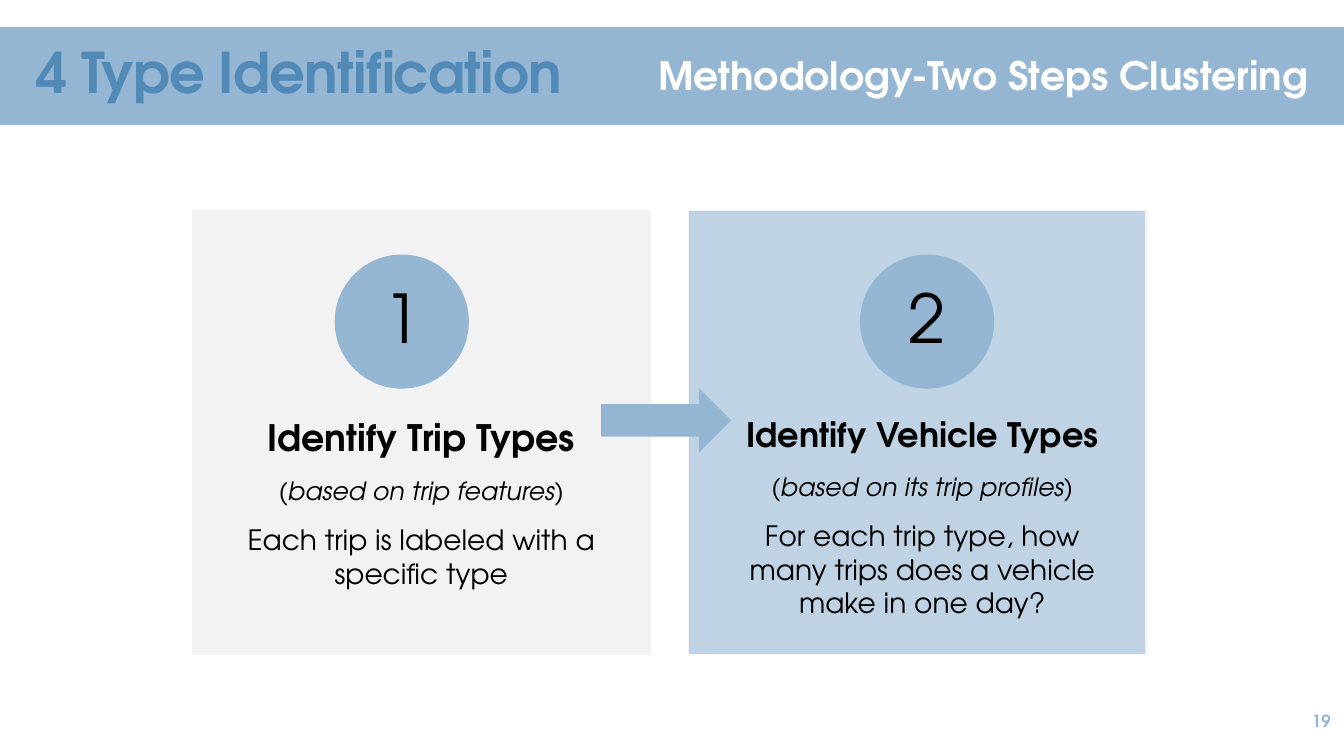
import pptx
import pptx.dml.color
import pptx.enum.shapes
import pptx.enum.text
import pptx.util

Pt = pptx.util.Pt
RGBColor = pptx.dml.color.RGBColor
Shape = pptx.enum.shapes.MSO_SHAPE
Align = pptx.enum.text.PP_ALIGN
Anchor = pptx.enum.text.MSO_ANCHOR

BLUE = RGBColor(0x94, 0xB6, 0xD2)
DEEP_BLUE = RGBColor(0x51, 0x89, 0xB7)
PALE_BLUE = RGBColor(0xBF, 0xD3, 0xE4)
GREY = RGBColor(0xF2, 0xF2, 0xF2)
WHITE = RGBColor(0xFF, 0xFF, 0xFF)
BLACK = RGBColor(0, 0, 0)


class SlideBuilder:
    font_name = "TeX Gyre Adventor"
    outline_width = 0.85
    card_top, card_width, card_height = 150.5, 326.9, 316.8
    circle_top, circle_size, number_inset = 182.2, 95, 14

    def __init__(self, slide):
        self.slide = slide

    def shape(self, kind, left, top, width, height, fill, outline=None):
        shape = self.slide.shapes.add_shape(kind, Pt(left), Pt(top), Pt(width), Pt(height))
        shape.shadow.inherit = False
        shape.fill.solid()
        shape.fill.fore_color.rgb = fill
        if outline is None:
            shape.line.fill.background()
        else:
            shape.line.color.rgb = outline
            shape.line.width = Pt(self.outline_width)

    def text_box(self, left, top, width, height, margins=(7.2, 3.6),
                 anchor=Anchor.TOP, wrap=True):
        """Add an empty text frame; margins are (horizontal, vertical)."""
        box = self.slide.shapes.add_textbox(Pt(left), Pt(top), Pt(width), Pt(height))
        frame = box.text_frame
        frame.word_wrap = wrap
        frame.vertical_anchor = anchor
        frame.margin_left = frame.margin_right = Pt(margins[0])
        frame.margin_top = frame.margin_bottom = Pt(margins[1])
        return frame

    def style(self, paragraph, text, size, color=BLACK, bold=False, italic=False,
              align=Align.LEFT):
        paragraph.text = text
        paragraph.alignment = align
        font = paragraph.font
        font.name, font.size = self.font_name, Pt(size)
        font.bold, font.italic = bold, italic
        font.color.rgb = color

    def header(self, title, subtitle):
        self.shape(Shape.RECTANGLE, 0, 19.4, 960, 69.8, BLUE)
        paragraph = self.text_box(18.7, 8.6, 534, 90.7, anchor=Anchor.MIDDLE).paragraphs[0]
        self.style(paragraph, title, 40, DEEP_BLUE, bold=True)
        paragraph.line_spacing = 0.9
        paragraph.runs[0].font._element.set("spc", "-60")
        frame = self.text_box(463, 33.1, 487.4, 41, wrap=False)
        self.style(frame.paragraphs[0], subtitle, 28, WHITE, bold=True)

    def step(self, number, card_left, text_left, text_top, circle_left, fill,
             heading, heading_size, basis, detail):
        self.shape(Shape.RECTANGLE, card_left, self.card_top, self.card_width,
                   self.card_height, fill, GREY)

        frame = self.text_box(text_left, text_top, self.card_width, 190, (21.6, 25.9))
        lines = [(heading, heading_size, True, False),
                 (basis, 18, False, True),
                 (detail, 20, False, False)]
        for index, (text, size, bold, italic) in enumerate(lines):
            paragraph = frame.add_paragraph() if index else frame.paragraphs[0]
            self.style(paragraph, text, size, bold=bold, italic=italic, align=Align.CENTER)
            paragraph.space_after = Pt(12)

        self.shape(Shape.OVAL, circle_left, self.circle_top, self.circle_size,
                   self.circle_size, BLUE, BLUE)
        number_size = self.circle_size - 2 * self.number_inset
        frame = self.text_box(circle_left + self.number_inset,
                              self.circle_top + self.number_inset,
                              number_size, number_size, (7.2, 0.7), Anchor.MIDDLE)
        self.style(frame.paragraphs[0], str(number), 48, align=Align.CENTER)
        frame.paragraphs[0].line_spacing = 0.9

    def page_number(self, number):
        frame = self.text_box(837.4, 500.4, 120.2, 28.8, anchor=Anchor.MIDDLE)
        self.style(frame.paragraphs[0], str(number), 12, BLUE, bold=True, align=Align.RIGHT)


def main():
    presentation = pptx.Presentation()
    presentation.slide_width, presentation.slide_height = Pt(960), Pt(540)
    builder = SlideBuilder(presentation.slides.add_slide(presentation.slide_layouts[6]))

    builder.header("4 Type Identification", "Methodology-Two Steps Clustering")
    builder.step(1, 137.5, 137.5, 270.7, 239.5, GREY,
                 "Identify Trip Types", 26, "(based on trip features)",
                 "Each trip is labeled with a specific type")
    builder.step(2, 491.8, 495.4, 270, 614.7, PALE_BLUE,
                 "Identify Vehicle Types", 24, "(based on its trip profiles)",
                 "For each trip type, how many trips does a vehicle make in one day?")
    builder.shape(Shape.RIGHT_ARROW, 429.3, 277.2, 93, 46.2, BLUE)
    builder.page_number(19)

    presentation.save("out.pptx")


if __name__ == "__main__":
    main()
